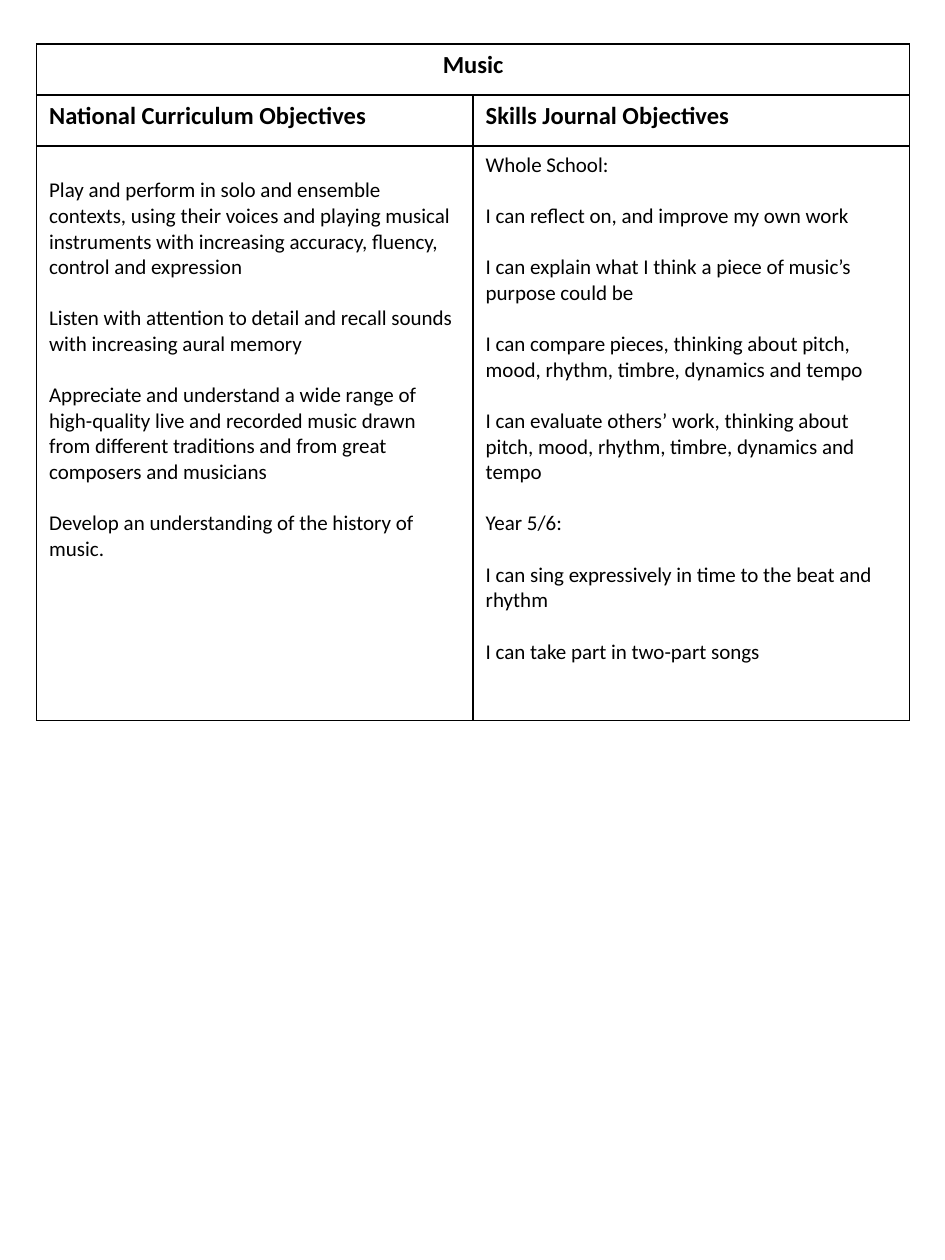
import pptx
import pptx.util
import pptx.dml.color
import pptx.enum.text
import pptx.oxml
import pptx.oxml.ns

COLOURS = {"text": "000000", "border": "000000", "background": "FFFFFF"}
FONT = "Calibri"
LINE_GAP = 14.65  # one line of body text, in points

presentation = pptx.Presentation()
presentation.slide_width = pptx.util.Inches(7.5)
presentation.slide_height = pptx.util.Inches(10)
slide = presentation.slides.add_slide(presentation.slide_layouts[6])
slide.background.fill.solid()
slide.background.fill.fore_color.rgb = pptx.dml.color.RGBColor.from_string(COLOURS["background"])

national_objectives = [
    "Play and perform in solo and ensemble contexts, using their voices and playing musical "
    "instruments with increasing accuracy, fluency, control and expression",
    "Listen with attention to detail and recall sounds with increasing aural memory",
    "Appreciate and understand a wide range of high-quality live and recorded music drawn "
    "from different traditions and from great composers and musicians",
    "Develop an understanding of the history of music.",
]
skills_objectives = [
    "Whole School:",
    "I can reflect on, and improve my own work",
    "I can explain what I think a piece of music’s purpose could be",
    "I can compare pieces, thinking about pitch, mood, rhythm, timbre, dynamics and tempo",
    "I can evaluate others’ work, thinking about pitch, mood, rhythm, timbre, dynamics and tempo",
    "Year 5/6:",
    "I can sing expressively in time to the beat and rhythm",
    "I can take part in two-part songs",
]
cell_texts = [
    [["Music"], []],
    [["National Curriculum Objectives"], ["Skills Journal Objectives"]],
    [national_objectives, skills_objectives],
]


def add_borders(cell):
    """Draw a one-point line on each side of a cell."""
    properties = cell._tc.get_or_add_tcPr()
    for position, side in enumerate(("lnL", "lnR", "lnT", "lnB")):
        line = pptx.oxml.parse_xml(
            f'<a:{side} {pptx.oxml.ns.nsdecls("a")} w="{pptx.util.Pt(1)}">'
            f'<a:solidFill><a:srgbClr val="{COLOURS["border"]}"/></a:solidFill></a:{side}>'
        )
        properties.insert(position, line)


# Table grid: two equal columns, two heading rows and a body row
row_heights = [0.405, 0.405, 4.56]
column_width = 3.465
frame = slide.shapes.add_table(
    3, 2, pptx.util.Inches(0.29), pptx.util.Inches(0.35),
    pptx.util.Inches(2 * column_width), pptx.util.Inches(sum(row_heights)))
table = frame.table
table.first_row = False
table.horz_banding = False
for column in table.columns:
    column.width = pptx.util.Inches(column_width)
for row, height in zip(table.rows, row_heights):
    row.height = pptx.util.Inches(height)
table.cell(0, 0).merge(table.cell(0, 1))

# Cell text, fills and borders
for row_index, row_texts in enumerate(cell_texts):
    is_heading = row_index < 2
    for column_index, texts in enumerate(row_texts):
        cell = table.cell(row_index, column_index)
        cell.fill.background()
        add_borders(cell)
        for index, text in enumerate(texts):
            frame_text = cell.text_frame
            paragraph = frame_text.add_paragraph() if index else frame_text.paragraphs[0]
            if index:
                paragraph.space_before = pptx.util.Pt(LINE_GAP)
            run = paragraph.add_run()
            run.text = text
            run.font.name = FONT
            run.font.size = pptx.util.Pt(14 if is_heading else 12)
            run.font.bold = is_heading
            run.font.color.rgb = pptx.dml.color.RGBColor.from_string(COLOURS["text"])

# The title is centred, and the left list starts one line lower
table.cell(0, 0).text_frame.paragraphs[0].alignment = pptx.enum.text.PP_ALIGN.CENTER
table.cell(2, 0).margin_top = pptx.util.Inches(0.05) + pptx.util.Pt(LINE_GAP)

presentation.save("out.pptx")
